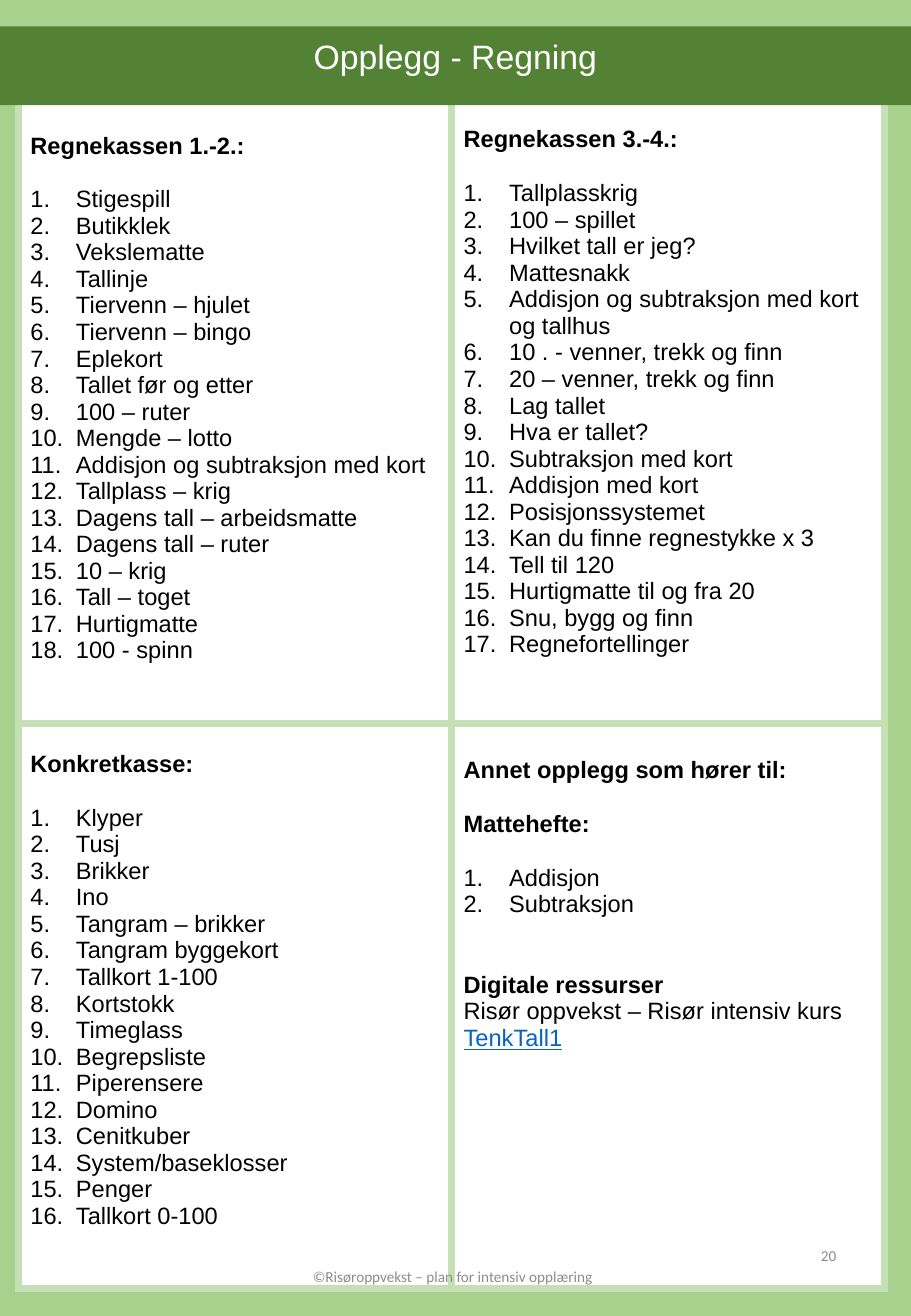
from dataclasses import dataclass

from lxml.etree import SubElement
from pptx import Presentation
from pptx.dml.color import RGBColor
from pptx.enum.text import MSO_ANCHOR, MSO_AUTO_SIZE, PP_ALIGN
from pptx.oxml.ns import qn
from pptx.util import Emu, Pt

EMU_PER_PX = 7620


@dataclass(frozen=True)
class Theme:
    """Colours, fonts and type sizes of the slide."""
    background: str = "A9D18E"
    band: str = "548235"
    border: str = "C5E0B4"
    paper: str = "FFFFFF"
    ink: str = "000000"
    link: str = "0563C1"
    muted: str = "8C8C8C"
    body_font: str = "Arial"
    footer_font: str = "Calibri"
    title_size: int = 20
    body_size: int = 14
    footer_size: int = 9
    border_width: float = 4.5
    blank_line: float = 16.1


THEME = Theme()

FIRST_BOX = [
    "Stigespill", "Butikklek", "Vekslematte", "Tallinje", "Tiervenn – hjulet",
    "Tiervenn – bingo", "Eplekort", "Tallet før og etter", "100 – ruter",
    "Mengde – lotto", "Addisjon og subtraksjon med kort", "Tallplass – krig",
    "Dagens tall – arbeidsmatte", "Dagens tall – ruter", "10 – krig",
    "Tall – toget", "Hurtigmatte", "100 - spinn",
]
SECOND_BOX = [
    "Tallplasskrig", "100 – spillet", "Hvilket tall er jeg?", "Mattesnakk",
    "Addisjon og subtraksjon med kort og tallhus",
    "10 . - venner, trekk og finn", "20 – venner, trekk og finn", "Lag tallet",
    "Hva er tallet?", "Subtraksjon med kort", "Addisjon med kort",
    "Posisjonssystemet", "Kan du finne regnestykke x 3", "Tell til 120",
    "Hurtigmatte til og fra 20", "Snu, bygg og finn", "Regnefortellinger",
]
CONCRETE_BOX = [
    "Klyper", "Tusj", "Brikker", "Ino", "Tangram – brikker",
    "Tangram byggekort", "Tallkort 1-100", "Kortstokk", "Timeglass",
    "Begrepsliste", "Piperensere", "Domino", "Cenitkuber",
    "System/baseklosser", "Penger", "Tallkort 0-100",
]


def px(length):
    """Turn whole pixels into EMU."""
    return Emu(length * EMU_PER_PX)


def rgb(colour):
    """Turn a hex string into a colour."""
    return RGBColor.from_string(colour)


def write(paragraph, text, size=THEME.body_size, font=THEME.body_font,
          colour=THEME.ink, bold=False, underline=False, align=PP_ALIGN.LEFT,
          blank_lines=0):
    """Add a formatted run to a paragraph."""
    paragraph.alignment = align
    if blank_lines:
        paragraph.space_before = Pt(blank_lines * THEME.blank_line)
    run = paragraph.add_run()
    run.text = text
    run.font.size = Pt(size)
    run.font.name = font
    run.font.color.rgb = rgb(colour)
    run.font.bold = bold
    run.font.underline = underline


def number(paragraph):
    """Give a paragraph an automatic number with a hanging indent."""
    properties = paragraph._p.get_or_add_pPr()
    properties.set("marL", str(px(45)))
    properties.set("indent", str(-px(45)))
    SubElement(properties, qn("a:buFont"), typeface="+mj-lt")
    SubElement(properties, qn("a:buAutoNum"), type="arabicPeriod")


def add_numbered_list(frame, items):
    """Add numbered items, set one line below the heading."""
    for index, item in enumerate(items):
        paragraph = frame.add_paragraph()
        number(paragraph)
        write(paragraph, item, blank_lines=int(index == 0))


def add_section(cell, heading, items, top):
    """Fill a cell with a heading and its numbered list."""
    cell.margin_top = px(top)
    write(cell.text_frame.paragraphs[0], heading, bold=True)
    add_numbered_list(cell.text_frame, items)


def add_other_material(cell):
    """Fill the cell for further material and digital resources."""
    add_section(cell, "Annet opplegg som hører til:", [], top=33)
    frame = cell.text_frame
    write(frame.add_paragraph(), "Mattehefte:", bold=True, blank_lines=1)
    add_numbered_list(frame, ["Addisjon", "Subtraksjon"])
    write(frame.add_paragraph(), "Digitale ressurser", bold=True, blank_lines=2)
    write(frame.add_paragraph(), "Risør oppvekst – Risør intensiv kurs")
    write(frame.add_paragraph(), "TenkTall1", colour=THEME.link, underline=True)


def style_cell(cell):
    """Give a cell its borders and fill."""
    properties = cell._tc.get_or_add_tcPr()
    for side in ("lnL", "lnR", "lnT", "lnB"):
        line = SubElement(properties, qn(f"a:{side}"), w=str(Pt(THEME.border_width)))
        fill = SubElement(line, qn("a:solidFill"))
        SubElement(fill, qn("a:srgbClr"), val=THEME.border)
    cell.fill.solid()
    cell.fill.fore_color.rgb = rgb(THEME.paper)


def add_material_table(slide):
    """Add the two by two table of material boxes."""
    table = slide.shapes.add_table(2, 2, px(18), px(98), px(856), px(1175)).table
    table.first_row = table.horz_banding = False
    for row, height in zip(table.rows, (617, 558)):
        row.height = px(height)
    for cell in table.iter_cells():
        style_cell(cell)
    add_section(table.cell(0, 0), "Regnekassen 1.-2.:", FIRST_BOX, top=33)
    add_section(table.cell(0, 1), "Regnekassen 3.-4.:", SECOND_BOX, top=27)
    add_section(table.cell(1, 0), "Konkretkasse:", CONCRETE_BOX, top=27)
    add_other_material(table.cell(1, 1))


def add_title_band(slide, text):
    """Set the title as a full-width band in front of the table."""
    title = slide.shapes.title
    title.left, title.top, title.width, title.height = px(0), px(26), px(900), px(78)
    title.fill.solid()
    title.fill.fore_color.rgb = rgb(THEME.band)
    frame = title.text_frame
    frame.auto_size = MSO_AUTO_SIZE.NONE
    frame.vertical_anchor = MSO_ANCHOR.TOP
    frame.margin_top = px(9)
    write(frame.paragraphs[0], text, size=THEME.title_size,
          colour=THEME.paper, align=PP_ALIGN.CENTER)
    title.element.getparent().append(title.element)


def add_footer(slide, text, left, top, width, align):
    """Add a small grey footer text."""
    footer = slide.shapes.add_textbox(px(left), px(top), px(width), px(70))
    frame = footer.text_frame
    frame.word_wrap = True
    frame.vertical_anchor = MSO_ANCHOR.MIDDLE
    write(frame.paragraphs[0], text, size=THEME.footer_size,
          font=THEME.footer_font, colour=THEME.muted, align=align)


def main():
    """Build and save the slide."""
    presentation = Presentation()
    presentation.slide_width, presentation.slide_height = px(900), px(1300)
    slide = presentation.slides.add_slide(presentation.slide_layouts[5])
    slide.background.fill.solid()
    slide.background.fill.fore_color.rgb = rgb(THEME.background)
    add_material_table(slide)
    add_title_band(slide, "Opplegg - Regning")
    add_footer(slide, "20", 636, 1205, 202, PP_ALIGN.RIGHT)
    add_footer(slide, "©Risøroppvekst – plan for intensiv opplæring",
               295, 1226, 304, PP_ALIGN.CENTER)
    presentation.save("out.pptx")


if __name__ == "__main__":
    main()
